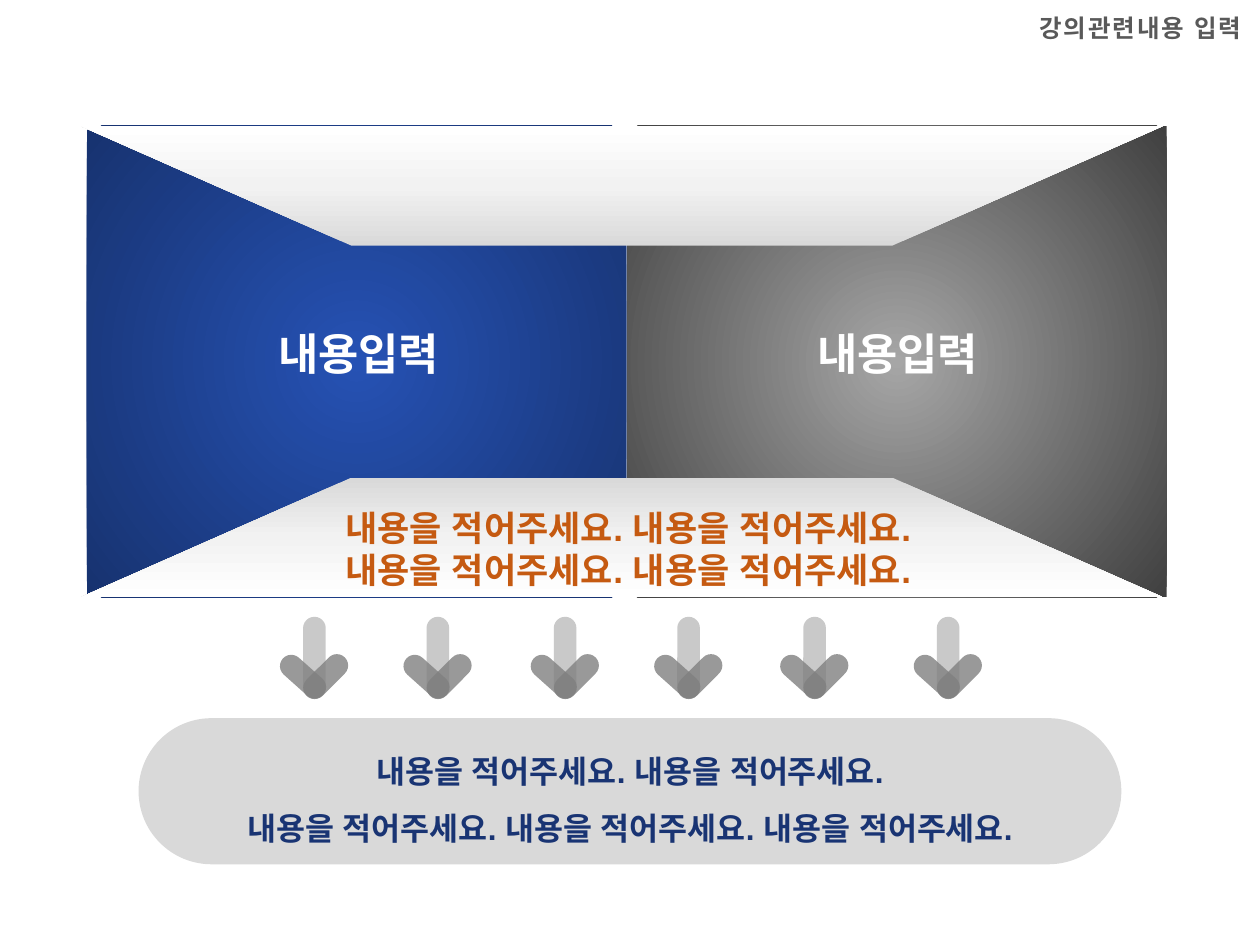
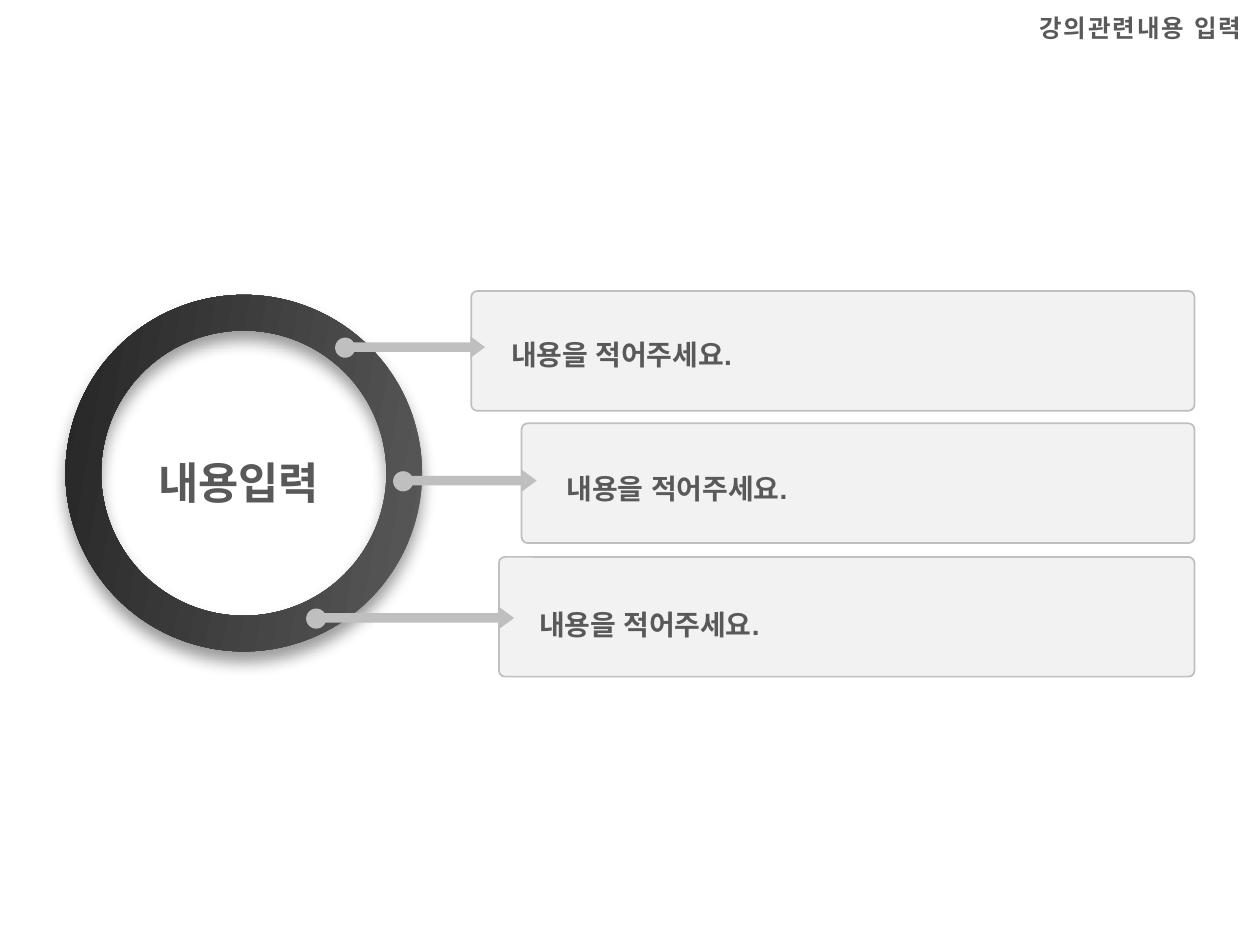
from dataclasses import dataclass

from lxml.etree import SubElement
from pptx import Presentation
from pptx.dml.color import RGBColor
from pptx.enum.shapes import MSO_SHAPE as Preset
from pptx.enum.text import MSO_ANCHOR as Anchor, MSO_AUTO_SIZE as AutoSize, PP_ALIGN as Align
from pptx.oxml.ns import qn
from pptx.util import Inches, Pt


@dataclass(frozen=True)
class Theme:
    font: str = "Arial"
    white: str = "FFFFFF"
    text: str = "595959"
    navy: str = "193473"
    orange: str = "C55A11"
    panel: str = "F2F2F2"
    band: str = "D9D9D9"
    pointer: str = "BFBFBF"
    stem: str = "A6A6A6"
    wing: str = "808080"
    blue_glow: tuple = ((0, "2652B4"), (100, "17326F"))
    grey_glow: tuple = ((0, "A6A6A6"), (100, "404040"))
    fold: tuple = ((0, "D9D9D9"), (50, "F2F2F2"), (100, "FFFFFF"))
    ring: tuple = ((0, "595959"), (100, "262626"))
    header_size: int = 14
    item_size: int = 16
    summary_size: int = 18
    message_size: int = 20
    heading_size: int = 25


THEME = Theme()
HEADER = "강의관련내용 입력"
HEADING = "내용입력"
SENTENCE = "내용을 적어주세요."


def set_all(target, values):
    for name, value in values.items():
        setattr(target, name, value)


def inches(box):
    return [Inches(value) for value in box]


def write_text(shape, lines, size, color, align=Align.LEFT, spacing=1.0, tracking=None):
    frame = shape.text_frame
    set_all(frame, {"word_wrap": True, "auto_size": AutoSize.SHAPE_TO_FIT_TEXT,
                    "vertical_anchor": Anchor.TOP})
    for index, line in enumerate(lines):
        paragraph = frame.paragraphs[0] if index == 0 else frame.add_paragraph()
        set_all(paragraph, {"alignment": align, "line_spacing": spacing, "space_before": Pt(0)})
        run = paragraph.add_run()
        run.text = line
        set_all(run.font, {"name": THEME.font, "size": Pt(size), "bold": True})
        run.font.color.rgb = RGBColor.from_string(color)
        properties = run.font._element
        SubElement(properties, qn("a:ea"), typeface=THEME.font)
        if tracking:
            properties.set("spc", str(tracking * 100))


def add_text(slide, box, lines, size, color, **format_values):
    shape = slide.shapes.add_textbox(*inches(box))
    write_text(shape, lines, size, color, **format_values)


def fill_solid(shape, color, opacity=None):
    shape.fill.solid()
    shape.fill.fore_color.rgb = RGBColor.from_string(color)
    if opacity:
        color_element = shape.element.spPr.find(".//" + qn("a:srgbClr"))
        SubElement(color_element, qn("a:alpha"), val=str(opacity * 1000))


def fill_gradient(shape, stops, angle=None):
    shape.fill.gradient()
    gradient = shape.element.spPr.find(qn("a:gradFill"))
    for child in list(gradient):
        gradient.remove(child)
    gradient.set("rotWithShape", "1")
    stop_list = SubElement(gradient, qn("a:gsLst"))
    for position, color in stops:
        stop = SubElement(stop_list, qn("a:gs"), pos=str(position * 1000))
        SubElement(stop, qn("a:srgbClr"), val=color)
    if angle is None:
        center = SubElement(gradient, qn("a:path"), path="circle")
        SubElement(center, qn("a:fillToRect"), {side: "50000" for side in "ltrb"})
    else:
        SubElement(gradient, qn("a:lin"), ang=str(angle * 60000), scaled="0")


def make_plain(shape):
    shape.shadow.inherit = False
    shape.line.fill.background()


def add_preset(shapes, preset, box, color=None, adjustments=(), rotation=0, opacity=None):
    shape = shapes.add_shape(preset, *inches(box))
    make_plain(shape)
    shape.rotation = rotation
    for index, value in enumerate(adjustments):
        shape.adjustments[index] = value
    if color:
        fill_solid(shape, color, opacity)
    return shape


def add_soft_shadow(shape):
    effects = shape.element.spPr.find(qn("a:effectLst"))
    shadow = SubElement(effects, qn("a:outerShdw"), blurRad=str(Pt(9)), dist=str(Pt(6)),
                        dir="5400000", algn="t", rotWithShape="0")
    color = SubElement(shadow, qn("a:srgbClr"), val="000000")
    SubElement(color, qn("a:alpha"), val="40000")


def add_slide(presentation):
    slide = presentation.slides.add_slide(presentation.slide_layouts[5])
    title = slide.shapes.title
    set_all(title, dict(zip(("left", "top", "width", "height"), inches((8.15, 0.05, 2.11, 0.34)))))
    write_text(title, [HEADER], THEME.header_size, THEME.text, tracking=1)
    return slide


def add_glowing_half(slide, left, stops):
    shape = add_preset(slide.shapes, Preset.RECTANGLE, (left, 1, 4.28, 3.74))
    fill_gradient(shape, stops)


def add_fold(slide, top, rotation):
    left, width, height, inset = 0.64, 8.59, 0.95, 2.15
    corners = [(left + inset, top), (left + width - inset, top),
               (left + width, top + height), (left, top + height)]
    points = [tuple(inches(corner)) for corner in corners]
    builder = slide.shapes.build_freeform(*points[0])
    builder.add_line_segments(points[1:], close=True)
    shape = builder.convert_to_shape()
    make_plain(shape)
    shape.rotation = rotation
    fill_gradient(shape, THEME.fold, 90)


def add_down_arrow(slide, left):
    shapes = slide.shapes.add_group_shape().shapes
    parts = [((left, 5.13, 0.65, 0.18), THEME.stem, 270, 60),
             ((left + 0.2, 5.28, 0.43, 0.18), THEME.wing, 315, 80),
             ((left + 0.02, 5.28, 0.43, 0.18), THEME.wing, 221.8, 80)]
    for box, color, rotation, opacity in parts:
        add_preset(shapes, Preset.ROUNDED_RECTANGLE, box, color, [0.5], rotation, opacity)


def add_panel(slide, left, top):
    right = 9.48
    panel = add_preset(slide.shapes, Preset.ROUNDED_RECTANGLE,
                       (left, top, right - left, 0.95), THEME.panel, [0.05])
    panel.line.color.rgb = RGBColor.from_string(THEME.pointer)
    panel.line.width = Pt(1)


def add_pointer(slide, dot_left, arrow_left, top, length):
    add_preset(slide.shapes, Preset.RIGHT_ARROW, (arrow_left, top, length, 0.17),
               THEME.pointer, [0.44, 0.68])
    add_preset(slide.shapes, Preset.OVAL, (dot_left, top + 0.01, 0.16, 0.16), THEME.pointer)


def build_comparison(presentation):
    slide = add_slide(presentation)
    for left, stops in ((0.69, THEME.blue_glow), (4.98, THEME.grey_glow)):
        add_glowing_half(slide, left, stops)
    for left, width in ((0.8, 4.09), (5.11, 4.03)):
        add_text(slide, (left, 2.57, width, 0.49), [HEADING], THEME.heading_size,
                 THEME.white, align=Align.CENTER, spacing=Pt(28))
    for top, rotation in ((3.79, 0), (1, 180)):
        add_fold(slide, top, rotation)
    pair = " ".join([SENTENCE] * 2)
    triple = " ".join([SENTENCE] * 3)
    add_text(slide, (0.72, 3.97, 8.53, 0.77), [pair, pair], THEME.message_size,
             THEME.orange, align=Align.CENTER, spacing=Pt(24))
    for left in (2.17, 3.15, 4.16, 5.14, 6.14, 7.2):
        add_down_arrow(slide, left)
    add_preset(slide.shapes, Preset.ROUNDED_RECTANGLE, (1.1, 5.7, 7.8, 1.16), THEME.band, [0.5])
    add_text(slide, (1.1, 5.77, 7.8, 1.01), [pair, triple], THEME.summary_size,
             THEME.navy, align=Align.CENTER, spacing=1.5)


def build_ring(presentation):
    slide = add_slide(presentation)
    rows = [((3.74, 2.31), (2.66, 2.75, 2.67, 1.1), (3.96, 2.5, 5.73, 0.5)),
            ((4.14, 3.36), (3.12, 3.26, 3.73, 1), (4.4, 3.56, 5.42, 0.45)),
            ((3.96, 4.42), (2.43, 2.5, 4.82, 1.58), (4.18, 4.64, 5.51, 0.45))]
    for panel, _, _ in rows:
        add_panel(slide, *panel)
    ring = add_preset(slide.shapes, Preset.DONUT, (0.52, 2.34, 2.83, 2.83), adjustments=[0.1])
    fill_gradient(ring, THEME.ring, 190)
    add_soft_shadow(ring)
    add_text(slide, (1.16, 3.36, 1.75, 0.65), [HEADING], THEME.heading_size,
             THEME.text, spacing=1.5)
    for _, pointer, text_box in rows:
        add_pointer(slide, *pointer)
        add_text(slide, text_box, [SENTENCE], THEME.item_size, THEME.text, spacing=1.5)


def main():
    presentation = Presentation()
    set_all(presentation, {"slide_width": Inches(10), "slide_height": Inches(7.5)})
    build_comparison(presentation)
    build_ring(presentation)
    presentation.save("out.pptx")


if __name__ == "__main__":
    main()
